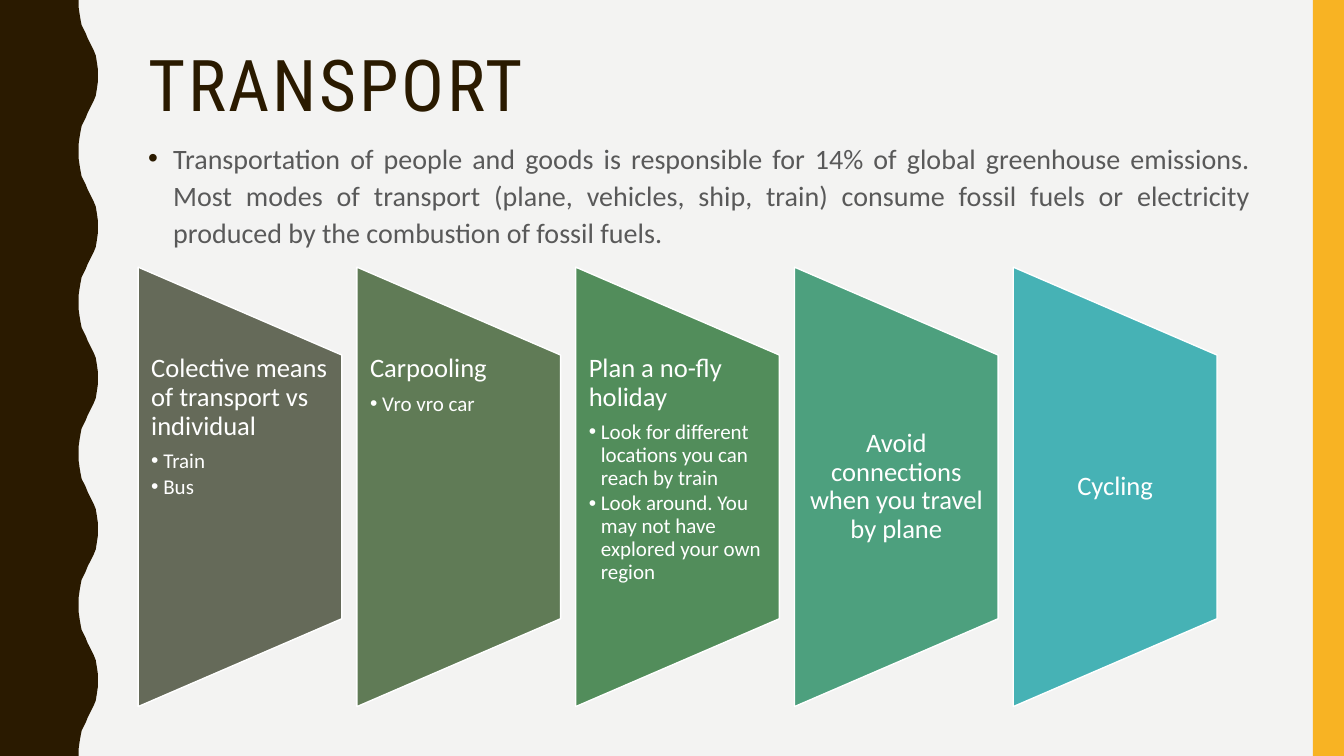
from dataclasses import dataclass

from lxml.etree import SubElement
from pptx import Presentation
from pptx.dml.color import RGBColor
from pptx.enum.shapes import MSO_SHAPE
from pptx.enum.text import MSO_ANCHOR, MSO_AUTO_SIZE, PP_ALIGN
from pptx.oxml.ns import qn
from pptx.util import Emu, Pt

PX = 9144  # EMU in one px, 100 px to the inch
PAGE_WIDTH, PAGE_HEIGHT = 1333, 750

BROWN = RGBColor(0x2A, 0x1A, 0x00)
GOLD = RGBColor(0xF8, 0xB3, 0x23)
PAPER = RGBColor(0xF3, 0xF3, 0xF2)
GREY = RGBColor(0x59, 0x59, 0x59)
WHITE = RGBColor(0xFF, 0xFF, 0xFF)

TITLE_FONT, BODY_FONT = "Roboto Condensed", "Calibri"
HEADING_SIZE, DETAIL_SIZE = 19, 15

# Half a period of the wavy edge, as (x, y)
WAVE_PERIOD = 150
HALF_WAVE = [(78, 0), (78, 7), (79, 14), (80, 20), (81, 25), (83, 29), (85, 33), (87, 38),
             (89, 42), (91, 46), (93, 50), (95, 55), (96, 61), (97, 68), (97, 75)]

PANEL_LEFT, PANEL_TOP, PANEL_PITCH = 137, 265, 217
PANEL_WIDTH, PANEL_HEIGHT = 202, 436
PANEL_TEXT_TOP, PANEL_TEXT_HEIGHT = 352, 262


@dataclass(frozen=True)
class Panel:
    colour: RGBColor
    heading: str
    details: tuple[str, ...] = ()


PANELS = [
    Panel(RGBColor(0x65, 0x6A, 0x59), "Colective means of transport vs individual",
          ("Train", "Bus")),
    Panel(RGBColor(0x60, 0x7B, 0x56), "Carpooling", ("Vro vro car",)),
    Panel(RGBColor(0x52, 0x8D, 0x5B), "Plan a no-fly holiday",
          ("Look for different locations you can reach by train",
           "Look around. You may not have explored your own region")),
    Panel(RGBColor(0x4D, 0xA0, 0x7E), "Avoid connections when you travel by plane"),
    Panel(RGBColor(0x46, 0xB2, 0xB5), "Cycling"),
]


def px(length: int) -> Emu:
    return Emu(length * PX)


def place(left: int, top: int, width: int, height: int) -> tuple[Emu, ...]:
    return px(left), px(top), px(width), px(height)


def paint(shape, colour: RGBColor, outline: RGBColor | None = None) -> None:
    shape.shadow.inherit = False
    shape.fill.solid()
    shape.fill.fore_color.rgb = colour
    if outline is None:
        shape.line.fill.background()
    else:
        shape.line.color.rgb = outline
        shape.line.width = Pt(1)


def write(para, text: str, *, size: int, colour: RGBColor, font: str = BODY_FONT,
          align: PP_ALIGN = PP_ALIGN.LEFT, line_spacing: float = 0.9, before: float = 0,
          after: float = 0, tracking: int = 0, indent: int = 0,
          bullet_colour: RGBColor | None = None) -> None:
    para.alignment = align
    para.line_spacing = line_spacing
    para.space_before, para.space_after = Pt(before), Pt(after)
    span = para.add_run()
    span.text = text
    span.font.name, span.font.size = font, Pt(size)
    span.font.color.rgb = colour
    if tracking:
        span.font._element.set("spc", str(tracking * 100))
    if bullet_colour is not None:
        properties = para._p.get_or_add_pPr()
        properties.set("marL", str(px(indent)))
        properties.set("indent", str(px(-indent)))
        holder = SubElement(properties, qn("a:buClr"))
        SubElement(holder, qn("a:srgbClr")).set("val", str(bullet_colour))
        SubElement(properties, qn("a:buFont")).set("typeface", "Arial")
        SubElement(properties, qn("a:buChar")).set("char", "•")


def add_box(shapes, left: int, top: int, width: int, height: int):
    frame = shapes.add_textbox(*place(left, top, width, height)).text_frame
    frame.word_wrap = True
    return frame


def add_wavy_edge(page) -> None:
    rising = HALF_WAVE[1:]
    falling = [(x, WAVE_PERIOD - y) for x, y in reversed(HALF_WAVE[:-1])]
    edge = [(x, y + start) for start in range(0, PAGE_HEIGHT, WAVE_PERIOD)
            for x, y in rising + falling]
    builder = page.shapes.build_freeform(0, 0, scale=float(PX))
    builder.add_line_segments([HALF_WAVE[0], *edge, (0, PAGE_HEIGHT)], close=True)
    paint(builder.convert_to_shape(), BROWN)


def add_panel(shapes, panel: Panel, left: int) -> None:
    # The trapezoid is laid out lying down, then turned about its centre
    shift = (PANEL_HEIGHT - PANEL_WIDTH) // 2
    trapezoid = shapes.add_shape(
        MSO_SHAPE.FLOWCHART_MANUAL_OPERATION,
        *place(left - shift, PANEL_TOP + shift, PANEL_HEIGHT, PANEL_WIDTH))
    trapezoid.rotation = 270
    paint(trapezoid, panel.colour, WHITE)

    frame = add_box(shapes, left, PANEL_TEXT_TOP, PANEL_WIDTH, PANEL_TEXT_HEIGHT)
    frame.margin_left = frame.margin_right = px(13)
    frame.margin_top = frame.margin_bottom = 0
    frame.vertical_anchor = MSO_ANCHOR.TOP if panel.details else MSO_ANCHOR.MIDDLE
    write(frame.paragraphs[0], panel.heading, size=HEADING_SIZE, colour=WHITE,
          align=PP_ALIGN.LEFT if panel.details else PP_ALIGN.CENTER,
          after=HEADING_SIZE * 0.35)
    for detail in panel.details:
        para = frame.add_paragraph()
        para.level = 1
        write(para, detail, size=DETAIL_SIZE, colour=WHITE, after=DETAIL_SIZE * 0.15,
              indent=12, bullet_colour=WHITE)


def main() -> None:
    deck = Presentation()
    deck.slide_width, deck.slide_height = px(PAGE_WIDTH), px(PAGE_HEIGHT)
    page = deck.slides.add_slide(deck.slide_layouts[5])
    page.background.fill.solid()
    page.background.fill.fore_color.rgb = PAPER

    # Side decorations
    add_wavy_edge(page)
    band = page.shapes.add_shape(MSO_SHAPE.RECTANGLE, *place(1302, 0, 31, PAGE_HEIGHT))
    paint(band, GOLD)

    # Title
    title = page.shapes.title
    title.left, title.top, title.width, title.height = place(137, 42, 1113, 91)
    title.text_frame.auto_size = MSO_AUTO_SIZE.NONE
    title.text_frame.vertical_anchor = MSO_ANCHOR.MIDDLE
    write(title.text_frame.paragraphs[0], "TRANSPORT", size=51, colour=BROWN,
          font=TITLE_FONT, tracking=2)

    # Introduction
    introduction = add_box(page.shapes, 137, 132, 1113, 511)
    write(introduction.paragraphs[0],
          "Transportation of people and goods is responsible for 14% of global greenhouse "
          "emissions. Most modes of transport (plane, vehicles, ship, train) consume fossil "
          "fuels or electricity produced by the combustion of fossil fuels.",
          size=20, colour=GREY, align=PP_ALIGN.JUSTIFY, line_spacing=1.1, before=7,
          indent=25, bullet_colour=BROWN)

    # Row of panels
    group = page.shapes.add_group_shape()
    for index, panel in enumerate(PANELS):
        add_panel(group.shapes, panel, PANEL_LEFT + index * PANEL_PITCH)

    deck.save("out.pptx")


if __name__ == "__main__":
    main()
